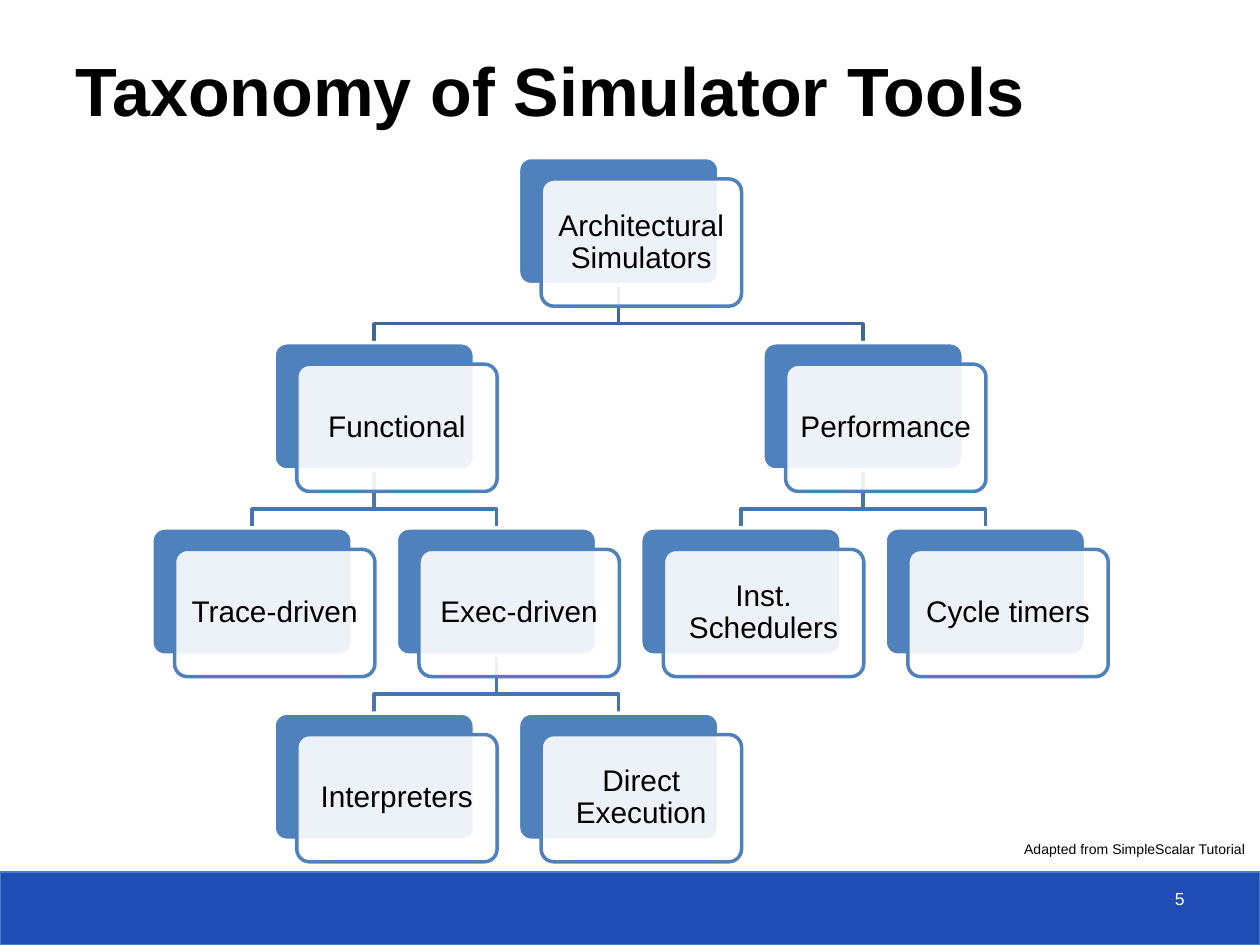
import pptx
import pptx.util
import pptx.dml.color
import pptx.enum.shapes
import pptx.enum.text
import pptx.oxml.ns
from dataclasses import dataclass
from lxml import etree

Inches = pptx.util.Inches
Pt = pptx.util.Pt
Shape = pptx.enum.shapes.MSO_SHAPE
Anchor = pptx.enum.text.MSO_ANCHOR
Align = pptx.enum.text.PP_ALIGN
qn = pptx.oxml.ns.qn


@dataclass(frozen=True)
class Theme:
    font: str = "Arial"
    ink: str = "000000"
    paper: str = "FFFFFF"
    band: str = "204DB5"
    rim: str = "4B7EBC"
    node: str = "4F81BD"
    trunk: str = "3F6797"
    twig: str = "4875AC"
    head: int = 39
    body: int = 17
    page: int = 10
    note: int = 8


CARD = (1.59, 1.01)
SHIFT = (0.18, 0.17)
COL, ROW = 0.97, 1.47
LEFT, TOP = 2, 1.25

TREE = {
    "Architectural Simulators": (3, 0, None),
    "Functional": (1, 1, "Architectural Simulators"),
    "Performance": (5, 1, "Architectural Simulators"),
    "Trace-driven": (0, 2, "Functional"),
    "Exec-driven": (2, 2, "Functional"),
    "Inst. Schedulers": (4, 2, "Performance"),
    "Cycle timers": (6, 2, "Performance"),
    "Interpreters": (1, 3, "Exec-driven"),
    "Direct Execution": (3, 3, "Exec-driven"),
}


def color(code):
    return pptx.dml.color.RGBColor.from_string(code)


def place(col, row):
    return LEFT + COL * col, TOP + ROW * row


class Deck:
    def __init__(self, theme):
        self.theme = theme
        self.show = pptx.Presentation()
        self.show.slide_width = Inches(10)
        self.show.slide_height = Inches(7.5)
        self.slide = self.show.slides.add_slide(self.show.slide_layouts[5])

    def paint(self, shape, fill, alpha=None):
        shape.fill.solid()
        shape.fill.fore_color.rgb = color(fill)
        if alpha:
            tone = shape.element.spPr.find(qn("a:solidFill"))[0]
            etree.SubElement(tone, qn("a:alpha")).set("val", str(alpha * 1000))

    def stroke(self, shape, line, width):
        shape.shadow.inherit = False
        shape.line.color.rgb = color(line)
        shape.line.width = Pt(width)

    def letter(self, shape, text, size, ink, align=Align.LEFT, bold=False):
        shape.text_frame.text = text
        para = shape.text_frame.paragraphs[0]
        para.alignment = align
        para.font.name = self.theme.font
        para.font.size = Pt(size)
        para.font.bold = bold
        para.font.color.rgb = color(ink)
        return para

    def title(self, text, box):
        head = self.slide.shapes.title
        head.left, head.top, head.width, head.height = map(Inches, box)
        self.paint(head, self.theme.paper, 75)
        self.letter(head, text, self.theme.head, self.theme.ink, bold=True)
        frame = head.text_frame
        frame.vertical_anchor = Anchor.BOTTOM
        frame.auto_size = pptx.enum.text.MSO_AUTO_SIZE.NONE

    def block(self, kind, box, fill, line, width, alpha=None):
        shape = self.slide.shapes.add_shape(kind, *map(Inches, box))
        self.paint(shape, fill, alpha)
        self.stroke(shape, line, width)
        return shape

    def label(self, text, box, size, ink, align=Align.LEFT, wrap=True):
        area = self.slide.shapes.add_textbox(*map(Inches, box))
        area.text_frame.word_wrap = wrap
        self.letter(area, text, size, ink, align)

    def branch(self, start, end, line):
        x, y = start[0], start[1] + CARD[1]
        bend = y + 0.31
        pen = self.slide.shapes.build_freeform(Inches(x), Inches(y))
        points = [(x, bend), (end[0], bend), end]
        pen.add_line_segments(
            [(Inches(a), Inches(b)) for a, b in points], close=False)
        shape = pen.convert_to_shape()
        shape.fill.background()
        self.stroke(shape, line, 2)

    def card(self, text, spot):
        look = self.theme
        x, y = spot[0] - CARD[0] / 2, spot[1]
        back = self.block(Shape.ROUNDED_RECTANGLE, (x, y, *CARD),
                          look.node, look.paper, 2)
        front = self.block(Shape.ROUNDED_RECTANGLE,
                           (x + SHIFT[0], y + SHIFT[1], *CARD),
                           look.paper, look.node, 2, 90)
        for shape in (back, front):
            shape.adjustments[0] = 0.1
        frame = front.text_frame
        frame.word_wrap = True
        frame.vertical_anchor = Anchor.MIDDLE
        frame.margin_left = frame.margin_right = Inches(0.07)
        frame.margin_top = frame.margin_bottom = Inches(0.07)
        para = self.letter(front, text, look.body, look.ink, Align.CENTER)
        para.line_spacing = 0.9
        para.space_after = Pt(6)


def main():
    look = Theme()
    deck = Deck(look)
    deck.title("Taxonomy of Simulator Tools", (0.5, 0.25, 9.22, 0.83))
    deck.block(Shape.RECTANGLE, (0, 6.92, 10, 0.58), look.band, look.rim, 0.75)
    for col, row, parent in TREE.values():
        if parent:
            line = look.trunk if row == 1 else look.twig
            deck.branch(place(*TREE[parent][:2]), place(col, row), line)
    for text, (col, row, parent) in TREE.items():
        deck.card(text, place(col, row))
    deck.label("5", (7.17, 7, 2.33, 0.33), look.page, look.paper, Align.RIGHT)
    deck.label("Adapted from SimpleScalar Tutorial", (8.03, 6.62, 1.97, 0.24),
               look.note, look.ink, wrap=False)
    deck.show.save("out.pptx")


if __name__ == "__main__":
    main()
